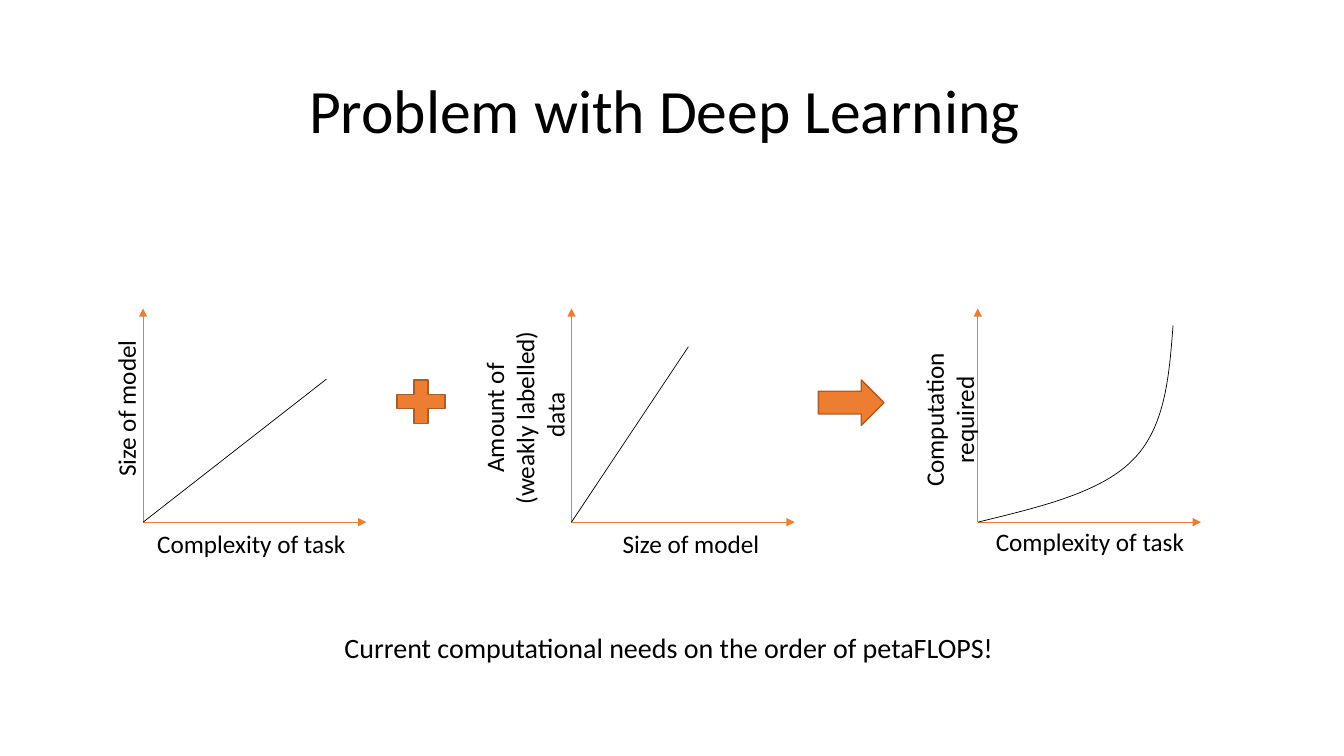
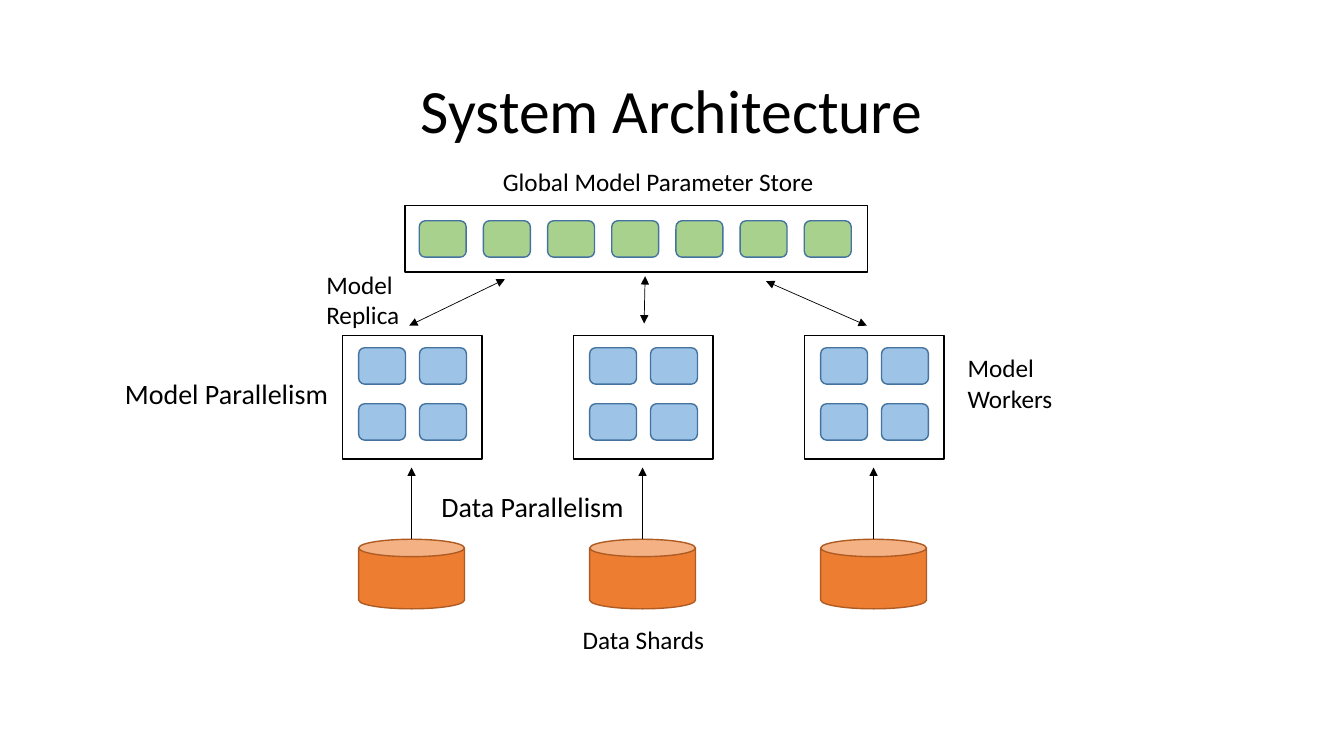
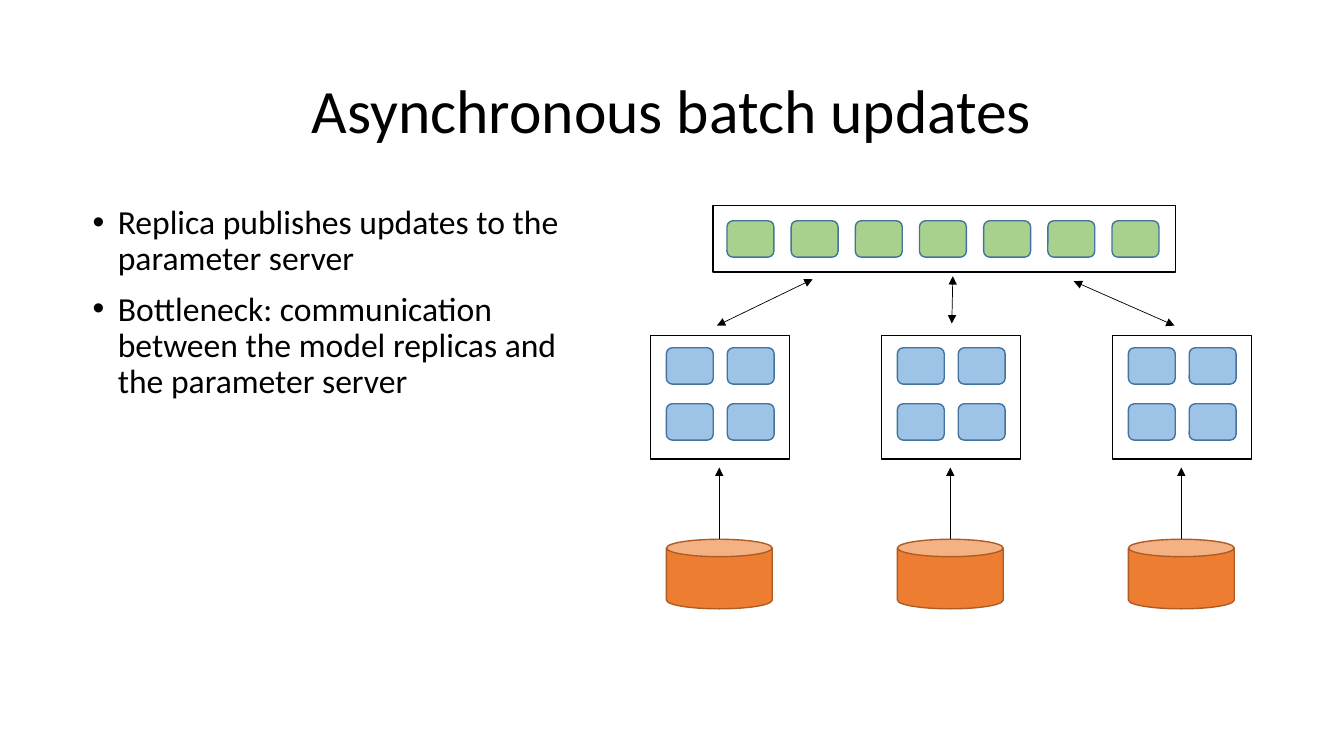
from dataclasses import dataclass
from itertools import product
from typing import NamedTuple

from lxml import etree
from pptx import Presentation
from pptx.dml.color import RGBColor
from pptx.enum.shapes import MSO_CONNECTOR, MSO_SHAPE
from pptx.enum.text import MSO_ANCHOR, MSO_AUTO_SIZE, PP_ALIGN
from pptx.oxml.ns import qn
from pptx.util import Pt

STRAIGHT = MSO_CONNECTOR.STRAIGHT
RECT, ROUNDED, CAN = MSO_SHAPE.RECTANGLE, MSO_SHAPE.ROUNDED_RECTANGLE, MSO_SHAPE.CAN
PLUS, ARROW = MSO_SHAPE.MATH_PLUS, MSO_SHAPE.RIGHT_ARROW
LEFT, CENTER = PP_ALIGN.LEFT, PP_ALIGN.CENTER
MIDDLE, TOP = MSO_ANCHOR.MIDDLE, MSO_ANCHOR.TOP
GROW = MSO_AUTO_SIZE.SHAPE_TO_FIT_TEXT
LAYOUT_CONTENT, LAYOUT_TITLE_ONLY = 1, 5


@dataclass(frozen=True)
class Theme:
    """Colours and type sizes of the deck."""
    font: str = "Calibri"
    ink: RGBColor = RGBColor(0x00, 0x00, 0x00)
    paper: RGBColor = RGBColor(0xFF, 0xFF, 0xFF)
    orange: RGBColor = RGBColor(0xED, 0x7D, 0x31)
    orange_edge: RGBColor = RGBColor(0xAF, 0x5C, 0x24)
    green: RGBColor = RGBColor(0xA9, 0xD1, 0x8E)
    blue: RGBColor = RGBColor(0x9D, 0xC3, 0xE6)
    blue_edge: RGBColor = RGBColor(0x43, 0x73, 0x9E)
    title_size: float = 44
    body_size: float = 24
    note_size: float = 20
    label_size: float = 18
    outline: float = 1
    hairline: float = 0.5


class Box(NamedTuple):
    """A region in points."""
    left: float
    top: float
    width: float
    height: float

    def inner(self, left, top, width, height):
        """Return a box placed relative to this one."""
        return Box(self.left + left, self.top + top, width, height)

    def point(self, x, y):
        """Return a point placed relative to this box."""
        return self.left + x, self.top + y

    def emu(self):
        """Return the four lengths for python-pptx."""
        return [Pt(length) for length in self]


THEME = Theme()
TITLE_BOX = Box(66, 29, 828, 104)


def write(frame, paragraphs, size, align=LEFT):
    """Fill a text frame, one run for each paragraph."""
    for index, words in enumerate(paragraphs):
        paragraph = frame.paragraphs[0] if index == 0 else frame.add_paragraph()
        paragraph.alignment = align
        run = paragraph.add_run()
        run.text = words
        run.font.name = THEME.font
        run.font.size = Pt(size)
        run.font.color.rgb = THEME.ink


def place(placeholder, box, anchor):
    """Move a placeholder into a box."""
    placeholder.left, placeholder.top, placeholder.width, placeholder.height = box.emu()
    placeholder.text_frame.vertical_anchor = anchor


def add_titled_slide(deck, layout, title):
    """Add a slide with the shared title style."""
    slide = deck.slides.add_slide(deck.slide_layouts[layout])
    heading = slide.shapes.title
    place(heading, TITLE_BOX, MIDDLE)
    write(heading.text_frame, [title], THEME.title_size, CENTER)
    heading.text_frame.paragraphs[0].line_spacing = 0.9
    return slide


def add_bullets(slide, box, points):
    """Fill the body placeholder with a bulleted list."""
    body = slide.placeholders[1]
    place(body, box, TOP)
    write(body.text_frame, points, THEME.body_size)
    for paragraph in body.text_frame.paragraphs:
        paragraph.line_spacing = 0.9
        paragraph.space_before = Pt(10)
        properties = paragraph._p.get_or_add_pPr()
        properties.set("marL", str(Pt(18)))
        properties.set("indent", str(Pt(-18)))


def add_label(slide, box, paragraphs, size=THEME.label_size, align=LEFT, wrap=False):
    """Add a caption and return it."""
    label = slide.shapes.add_textbox(*box.emu())
    label.text_frame.word_wrap = wrap
    label.text_frame.auto_size = GROW
    write(label.text_frame, paragraphs, size, align)
    return label


def add_block(slide, kind, box, fill, edge):
    """Add a filled and outlined preset shape."""
    block = slide.shapes.add_shape(kind, *box.emu())
    block.shadow.inherit = False
    block.fill.solid()
    block.fill.fore_color.rgb = fill
    block.line.color.rgb = edge
    block.line.width = Pt(THEME.outline)


def add_line(slide, start, end, color=THEME.ink, arrows=()):
    """Add a thin line with arrowheads at the named ends."""
    line = slide.shapes.add_connector(STRAIGHT, *[Pt(v) for v in (*start, *end)])
    line.line.color.rgb = color
    line.line.width = Pt(THEME.hairline)
    outline = line.line._get_or_add_ln()
    for arrow in arrows:
        etree.SubElement(outline, qn(f"a:{arrow}"), type="triangle")
    etree.SubElement(line._element.spPr, qn("a:effectLst"))


def bezier(controls, steps=24):
    """Sample a cubic curve after its first point."""
    weights = (1, 3, 3, 1)
    for step in range(1, steps + 1):
        t = step / steps
        yield tuple(
            sum(w * (1 - t) ** (3 - i) * t ** i * controls[i][axis] for i, w in enumerate(weights))
            for axis in (0, 1))


def add_curve(slide, controls):
    """Add a smooth open curve through joined cubic segments."""
    samples = [p for start in range(0, len(controls) - 1, 3)
               for p in bezier(controls[start:start + 4])]
    builder = slide.shapes.build_freeform(*[Pt(v) for v in controls[0]])
    builder.add_line_segments([(Pt(x), Pt(y)) for x, y in samples], close=False)
    curve = builder.convert_to_shape()
    curve.shadow.inherit = False
    curve.fill.background()
    curve.line.color.rgb = THEME.ink
    curve.line.width = Pt(THEME.hairline)


def add_plot(slide, box, trend, x_label, x_label_at, y_label, y_label_at, y_lines, y_align):
    """Add axes, a trend and two axis captions; offsets start at the origin."""
    origin = box.point(0, box.height)
    for end in (box.point(box.width, box.height), box.point(0, 0)):
        add_line(slide, origin, end, THEME.orange, ["tailEnd"])
    points = [box.point(x, box.height - rise) for x, rise in trend]
    if len(points) == 2:
        add_line(slide, *points)
    else:
        add_curve(slide, points)
    length = 155.5
    x_left, x_drop = x_label_at
    add_label(slide, box.inner(x_left, box.height + x_drop, length, 29), [x_label], wrap=True)
    center_x, rise = y_label_at
    depth = 7.2 + 21.9 * y_lines
    caption = box.inner(center_x - length / 2, box.height - rise - depth / 2, length, depth)
    add_label(slide, caption, y_label, align=y_align, wrap=True).rotation = 270


def add_architecture(slide, box):
    """Draw parameter store, model replicas and data shards in a box."""
    store = box.inner(44.6, 0, 330.5, 47.5)
    add_block(slide, RECT, store, THEME.paper, THEME.ink)
    for column in range(7):
        slot = store.inner(10.1 + 45.84 * column, 10.8, 33.5, 26)
        add_block(slide, ROUNDED, slot, THEME.green, THEME.blue_edge)
    for column in range(3):
        replica = box.inner(165 * column, 92.9, 99.5, 88)
        add_block(slide, RECT, replica, THEME.paper, THEME.ink)
        for across, down in product(range(2), repeat=2):
            worker = replica.inner(11.4 + 43.5 * across, 8.6 + 40 * down, 33.5, 26)
            add_block(slide, ROUNDED, worker, THEME.blue, THEME.blue_edge)
        shard = replica.inner(11.4, 145.4, 75.6, 49.7)
        add_block(slide, CAN, shard, THEME.orange, THEME.orange_edge)
        add_line(slide, shard.point(37.8, 0), shard.point(37.8, -51.2), arrows=["tailEnd"])
    syncs = [((47.5, 85.7), (115.9, 52.6)),
             ((215.3, 84.2), (216, 50.4)),
             ((374.4, 85.7), (302.4, 54))]
    for below, above in syncs:
        add_line(slide, box.point(*below), box.point(*above), arrows=["headEnd", "tailEnd"])


def add_architecture_labels(slide, box):
    """Name the parts of the architecture around its box."""
    labels = [
        (107.3, -31.7, 250.6, ["Global Model Parameter Store"], THEME.label_size),
        (-18.8, 41.8, 67.7, ["Model", "Replica"], THEME.label_size),
        (439.2, 101.5, 75.6, ["Model", "Workers"], THEME.label_size),
        (63.4, 199.4, 146.2, ["Data Parallelism"], THEME.note_size),
        (-162.7, 118.8, 161.3, ["Model Parallelism"], THEME.note_size),
        (164.2, 295.2, 102.2, ["Data Shards"], THEME.label_size),
    ]
    for left, top, width, words, size in labels:
        height = 7.2 + 1.22 * size * len(words)
        add_label(slide, box.inner(left, top, width, height), words, size)


def problem_slide(deck):
    """Show how model size and data drive computation."""
    slide = add_titled_slide(deck, LAYOUT_TITLE_ONLY, "Problem with Deep Learning ")
    growth = [(0, 0), (44, 10.8), (87.8, 20.9), (110.9, 44.6),
              (133.9, 67.7), (136.8, 104.4), (139.5, 140.5)]
    plots = [
        (102.2, [(0, 0), (131, 102.2)], "Complexity of task", (3, 0.7),
         ["Size of model"], (-12.2, 103), 1, LEFT),
        (408.2, [(0, 0), (83.5, 125.3)], "Size of model", (29.5, 0.7),
         ["Amount of ", "(weakly labelled) ", "data"], (-33.1, 76.5), 3, CENTER),
        (698.4, growth, "Complexity of task", (5.8, -0.7),
         ["Computation required"], (-20.2, 73), 2, CENTER),
    ]
    for left, *parts in plots:
        add_plot(slide, Box(left, 220.3, 159.5, 152.7), *parts)
    add_block(slide, PLUS, Box(277.4, 265.7, 46.8, 42.5), THEME.orange, THEME.orange_edge)
    add_block(slide, ARROW, Box(584.6, 271.4, 46.8, 32.4), THEME.orange, THEME.orange_edge)
    add_label(slide, Box(239, 447.1, 482.4, 31.5),
              ["Current computational needs on the order of petaFLOPS!"], THEME.note_size)


def architecture_slide(deck):
    """Show the labelled system."""
    slide = add_titled_slide(deck, LAYOUT_TITLE_ONLY, "System Architecture")
    system = Box(244.8, 146.9, 429, 288)
    add_architecture(slide, system)
    add_architecture_labels(slide, system)


def updates_slide(deck):
    """Set the update scheme beside the system."""
    slide = add_titled_slide(deck, LAYOUT_CONTENT, "Asynchronous batch updates")
    add_bullets(slide, Box(59, 143.3, 373, 342.7), [
        "Replica publishes updates to the parameter server",
        "Bottleneck: communication between the model replicas and the parameter server",
    ])
    add_architecture(slide, Box(464.6, 146.9, 429, 288))


def main():
    """Build and save the deck."""
    deck = Presentation()
    deck.slide_width, deck.slide_height = Pt(960), Pt(540)
    for build in (problem_slide, architecture_slide, updates_slide):
        build(deck)
    deck.save("out.pptx")


if __name__ == "__main__":
    main()
